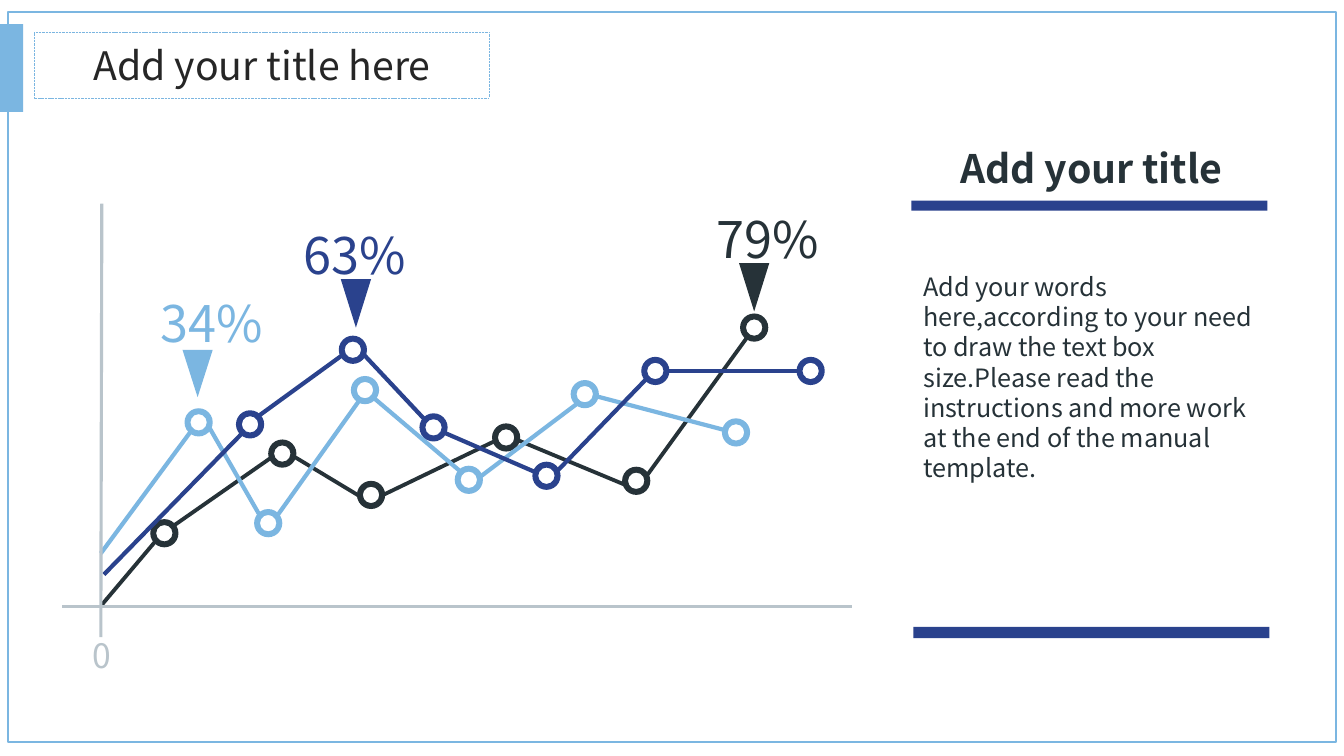
from dataclasses import dataclass

from lxml.etree import SubElement
from pptx import Presentation
from pptx.dml.color import RGBColor
from pptx.enum.dml import MSO_LINE
from pptx.enum.shapes import MSO_CONNECTOR, MSO_SHAPE
from pptx.enum.text import MSO_ANCHOR, MSO_AUTO_SIZE, PP_ALIGN
from pptx.oxml.ns import qn
from pptx.shapes.autoshape import Shape
from pptx.slide import Slide
from pptx.util import Inches, Pt

DARK = RGBColor(0x26, 0x32, 0x38)
SKY = RGBColor(0x7B, 0xB6, 0xE1)
NAVY = RGBColor(0x2A, 0x42, 0x8D)
GREY = RGBColor(0xB9, 0xC4, 0xCB)
TITLE_INK = RGBColor(0x26, 0x26, 0x26)
WHITE = RGBColor(0xFF, 0xFF, 0xFF)
FONT = "Noto Sans CJK JP"
RING_SIZE = 0.28

Point = tuple[float, float]
Box = tuple[float, float, float, float]


@dataclass
class Series:
    color: RGBColor
    line_width: float
    rings: list[Point]  # centres
    segments: list[tuple[float, float, float, float]]  # start x, y, end x, y
    peak: str
    peak_box: Box
    pointer_box: Box


SERIES = [
    Series(
        DARK, 2.75,
        [(1.63, 5.29), (2.8, 4.5), (3.68, 4.91), (5.02, 4.34), (6.31, 4.77), (7.48, 3.25)],
        [(1.01, 6, 1.55, 5.36), (1.73, 5.21, 2.69, 4.54), (2.9, 4.52, 3.58, 4.93),
         (3.78, 4.92, 4.92, 4.37), (5.12, 4.36, 6.2, 4.81), (6.4, 4.74, 7.43, 3.32)],
        "79%", (7.01, 2.02, 1.35, 0.71), (7.33, 2.61, 0.3, 0.48),
    ),
    Series(
        SKY, 3,
        [(1.97, 4.19), (2.66, 5.19), (3.62, 3.87), (4.65, 4.76), (5.8, 3.91), (7.3, 4.29)],
        [(1, 5.49, 1.9, 4.27), (2.07, 4.23, 2.58, 5.12), (2.74, 5.13, 3.58, 3.95),
         (3.71, 3.95, 4.57, 4.68), (4.75, 4.74, 5.73, 4), (5.91, 3.93, 7.2, 4.27)],
        "34%", (1.49, 2.85, 1.36, 0.71), (1.81, 3.47, 0.3, 0.47),
    ),
    Series(
        NAVY, 3,
        [(3.5, 3.47), (2.48, 4.21), (4.3, 4.24), (5.42, 4.72), (6.5, 3.68), (8.04, 3.68)],
        [(1.03, 5.7, 2.4, 4.3), (2.56, 4.13, 3.4, 3.52), (3.61, 3.52, 4.22, 4.17),
         (4.4, 4.29, 5.3, 4.68), (5.53, 4.67, 6.42, 3.75), (6.61, 3.68, 7.92, 3.68)],
        "63%", (2.91, 2.17, 1.35, 0.71), (3.38, 2.77, 0.3, 0.48),
    ),
]


def add_panel(
    slide: Slide, kind: MSO_SHAPE, box: Box, fill: RGBColor | None = None,
    line: RGBColor | None = None, line_width: float = 1,
) -> Shape:
    shape = slide.shapes.add_shape(kind, *map(Inches, box))
    shape.shadow.inherit = False
    if fill is None:
        shape.fill.background()
    else:
        shape.fill.solid()
        shape.fill.fore_color.rgb = fill
    if line is None:
        shape.line.fill.background()
    else:
        shape.line.color.rgb = line
        shape.line.width = Pt(line_width)
    return shape


def add_line(slide: Slide, start: Point, end: Point, color: RGBColor, width: float) -> None:
    connector = slide.shapes.add_connector(
        MSO_CONNECTOR.STRAIGHT, *map(Inches, (*start, *end))
    )
    connector.line.color.rgb = color
    connector.line.width = Pt(width)
    SubElement(connector._element.spPr, qn("a:effectLst"))


def write_text(
    shape: Shape, text: str, *, size: float, color: RGBColor, bold: bool = False,
    align: PP_ALIGN = PP_ALIGN.LEFT, anchor: MSO_ANCHOR = MSO_ANCHOR.TOP, wrap: bool = True,
) -> None:
    frame = shape.text_frame
    frame.word_wrap = wrap
    frame.auto_size = MSO_AUTO_SIZE.SHAPE_TO_FIT_TEXT
    frame.vertical_anchor = anchor
    paragraph = frame.paragraphs[0]
    paragraph.alignment = align
    paragraph.line_spacing = Pt(size * 1.2)
    run = paragraph.add_run()
    run.text = text
    run.font.name = FONT
    run.font.size = Pt(size)
    run.font.bold = bold
    run.font.color.rgb = color


def add_text(slide: Slide, box: Box, text: str, **text_format) -> None:
    write_text(slide.shapes.add_textbox(*map(Inches, box)), text, **text_format)


def draw_series(slide: Slide, series: Series) -> None:
    for x, y in series.rings:
        corner = (x - RING_SIZE / 2, y - RING_SIZE / 2)
        ring = add_panel(slide, MSO_SHAPE.DONUT, (*corner, RING_SIZE, RING_SIZE), series.color)
        ring.adjustments[0] = 0.21
    for x1, y1, x2, y2 in series.segments:
        add_line(slide, (x1, y1), (x2, y2), series.color, series.line_width)


def main() -> None:
    presentation = Presentation()
    presentation.slide_width = Inches(13.33)
    presentation.slide_height = Inches(7.5)
    slide = presentation.slides.add_slide(presentation.slide_layouts[6])

    # Line graph with peak pointers
    for series in SERIES:
        pointer = add_panel(
            slide, MSO_SHAPE.ISOSCELES_TRIANGLE, series.pointer_box, series.color
        )
        pointer.rotation = 180
    for series in SERIES:
        draw_series(slide, series)
    for series in SERIES:
        add_text(slide, series.peak_box, series.peak, size=36, color=series.color)

    # Axes
    add_line(slide, (1.01, 2.02), (1, 6.32), GREY, 2.25)
    add_line(slide, (0.62, 6.02), (8.45, 6.02), GREY, 2.25)
    add_text(slide, (0.82, 6.25, 0.41, 0.5), "0", size=24, color=GREY, wrap=False)

    # Side column
    add_panel(slide, MSO_SHAPE.RECTANGLE, (9.04, 1.99, 3.53, 0.1), NAVY)
    add_panel(slide, MSO_SHAPE.RECTANGLE, (9.06, 6.22, 3.53, 0.11), NAVY)
    add_text(
        slide, (9.06, 2.64, 3.57, 2.22),
        "Add your words here,according to your need to draw the text box size."
        "Please read the instructions and more work at the end of the manual template.",
        size=18, color=DARK,
    )
    add_text(
        slide, (9.06, 1.38, 3.53, 0.57), "Add your title",
        size=28, color=DARK, bold=True, align=PP_ALIGN.CENTER,
    )

    # Slide title and frame
    title_border = add_panel(
        slide, MSO_SHAPE.RECTANGLE, (0.34, 0.32, 4.51, 0.65), WHITE, SKY, 0.25
    )
    title_border.line.dash_style = MSO_LINE.SQUARE_DOT
    title = add_panel(slide, MSO_SHAPE.RECTANGLE, (0.71, 0.36, 3.78, 0.57), WHITE)
    write_text(
        title, "Add your title here", size=28, color=TITLE_INK,
        align=PP_ALIGN.CENTER, anchor=MSO_ANCHOR.MIDDLE, wrap=False,
    )
    add_panel(slide, MSO_SHAPE.RECTANGLE, (0, 0.24, 0.23, 0.87), SKY)
    add_panel(slide, MSO_SHAPE.RECTANGLE, (0.08, 0.12, 13.17, 7.24), line=SKY)

    presentation.save("out.pptx")


if __name__ == "__main__":
    main()
